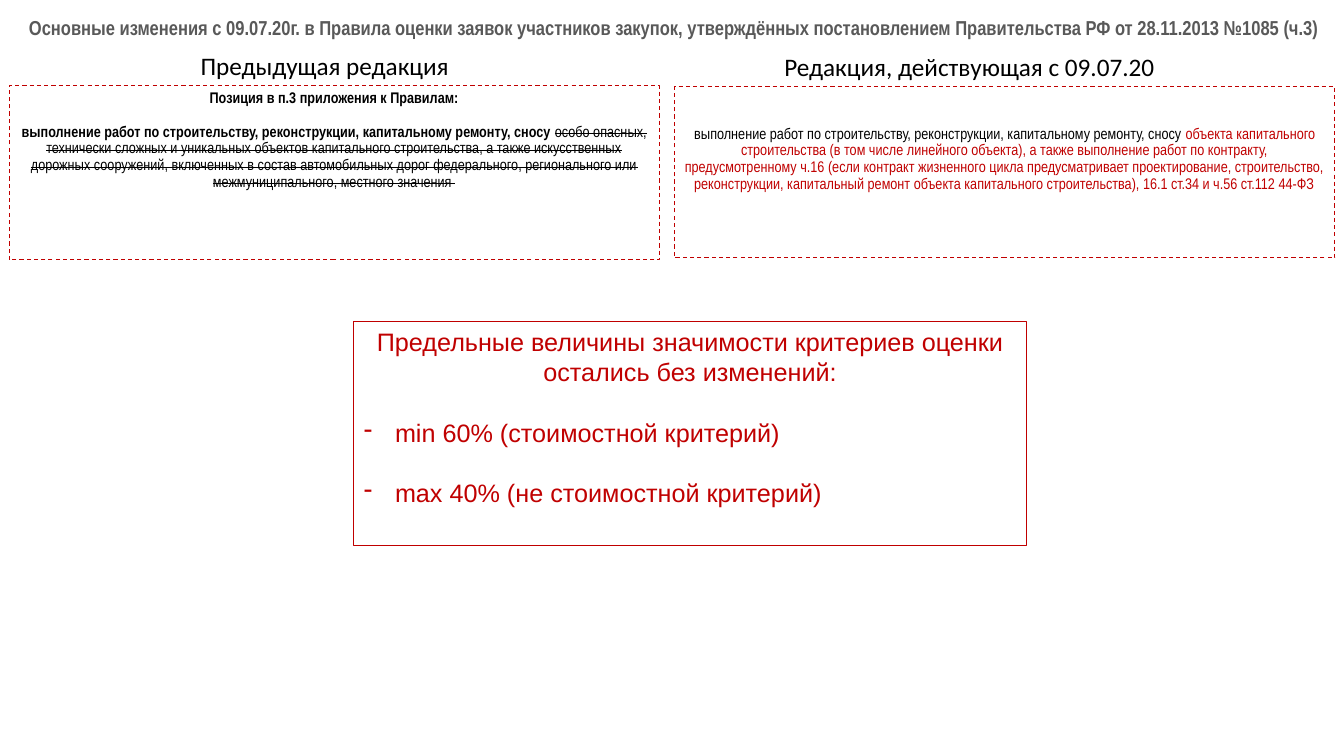
"""Slide comparing two wordings of the bid evaluation rules."""
from lxml import etree
from pptx import Presentation
from pptx.dml.color import RGBColor
from pptx.enum.dml import MSO_LINE
from pptx.enum.shapes import MSO_SHAPE
from pptx.enum.text import MSO_ANCHOR, MSO_AUTO_SIZE, PP_ALIGN
from pptx.oxml.ns import qn
from pptx.util import Inches, Pt

RED = RGBColor(0xC0, 0x00, 0x00)
BLACK = RGBColor(0x00, 0x00, 0x00)
GREY = RGBColor(0x59, 0x59, 0x59)
DASH = MSO_LINE.DASH
RECTANGLE = MSO_SHAPE.RECTANGLE
CENTER, LEFT = PP_ALIGN.CENTER, PP_ALIGN.LEFT
TOP, BOTTOM = MSO_ANCHOR.TOP, MSO_ANCHOR.BOTTOM
FIXED = MSO_AUTO_SIZE.NONE


def write(paragraph, text, font="Arial Narrow", size=11, color=BLACK,
          bold=False, strike=False, align=CENTER, spacing=1.0, before=0):
    """Append a formatted run to the paragraph."""
    paragraph.alignment = align
    paragraph.line_spacing = spacing
    paragraph.space_before = Pt(before)
    run = paragraph.add_run()
    run.text = text
    run.font.name, run.font.size = font, Pt(size)
    run.font.color.rgb, run.font.bold = color, bold
    if strike:
        run.font._element.set("strike", "sngStrike")


def add_frame(left, top, width, height, dash=None):
    """Add a red outlined box and return its text frame."""
    box = slide.shapes.add_shape(
        RECTANGLE, Inches(left), Inches(top), Inches(width), Inches(height))
    box.shadow.inherit = False
    box.fill.background()
    box.line.color.rgb, box.line.width = RED, Pt(0.75)
    if dash:
        box.line.dash_style = dash
    box.text_frame.word_wrap = True
    box.text_frame.vertical_anchor = TOP
    return box.text_frame


prs = Presentation()
prs.slide_width, prs.slide_height = Inches(13.33), Inches(7.5)
slide = prs.slides.add_slide(prs.slide_layouts[5])

title = slide.shapes.title
title.left, title.top = Inches(0.02), 0
title.width, title.height = prs.slide_width, Inches(0.44)
title.text_frame.auto_size = FIXED
title.text_frame.word_wrap = True
title.text_frame.vertical_anchor = BOTTOM
write(title.text_frame.paragraphs[0],
      "Основные изменения с 09.07.20г. в Правила оценки заявок участников закупок, "
      "утверждённых постановлением Правительства РФ от 28.11.2013 №1085 (ч.3)",
      size=14.4, color=GREY, bold=True)

for heading, left, top, width in (
        ("Предыдущая редакция", 1.89, 0.45, 2.69),
        ("Редакция, действующая с 09.07.20", 7.68, 0.46, 3.91)):
    label = slide.shapes.add_textbox(Inches(left), Inches(top), Inches(width), Inches(0.4))
    label.text_frame.word_wrap = False
    write(label.text_frame.paragraphs[0], heading, font="Calibri", size=18, align=LEFT)

works = "выполнение работ по строительству, реконструкции, капитальному ремонту, сносу "

previous = add_frame(0.09, 0.85, 6.45, 1.73, DASH)
write(previous.paragraphs[0], "Позиция в п.3 приложения к Правилам:", bold=True, spacing=0.9)
old_wording = previous.add_paragraph()
write(old_wording, works, bold=True, spacing=0.9, before=12)
write(old_wording,
      "особо опасных, технически сложных и уникальных объектов капитального строительства, "
      "а также искусственных дорожных сооружений, включенных в состав автомобильных дорог "
      "федерального, регионального или межмуниципального, местного значения ",
      strike=True, spacing=0.9, before=12)

current = add_frame(6.69, 0.86, 6.55, 1.7, DASH)
current.margin_top = Inches(0.39)
new_wording = current.paragraphs[0]
write(new_wording, works, spacing=0.9)
write(new_wording,
      "объекта капитального строительства (в том числе линейного объекта), а также "
      "выполнение работ по контракту, предусмотренному ч.16 (если контракт жизненного цикла "
      "предусматривает проектирование, строительство, реконструкции, капитальный ремонт "
      "объекта капитального строительства), 16.1 ст.34 и ч.56 ст.112 44-ФЗ",
      color=RED, spacing=0.9)

limits = add_frame(3.51, 3.19, 6.67, 2.22)
write(limits.paragraphs[0],
      "Предельные величины значимости критериев оценки остались без изменений:",
      font="Arial", size=18, color=RED)
for limit in ("min 60% (стоимостной критерий)", "max 40% (не стоимостной критерий)"):
    item = limits.add_paragraph()
    write(item, limit, font="Arial", size=18, color=RED, align=LEFT, before=21.5)
    properties = item._p.get_or_add_pPr()
    properties.set("marL", str(Inches(0.31)))
    properties.set("indent", str(-Inches(0.31)))
    etree.SubElement(properties, qn("a:buChar")).set("char", "-")

prs.save("out.pptx")
